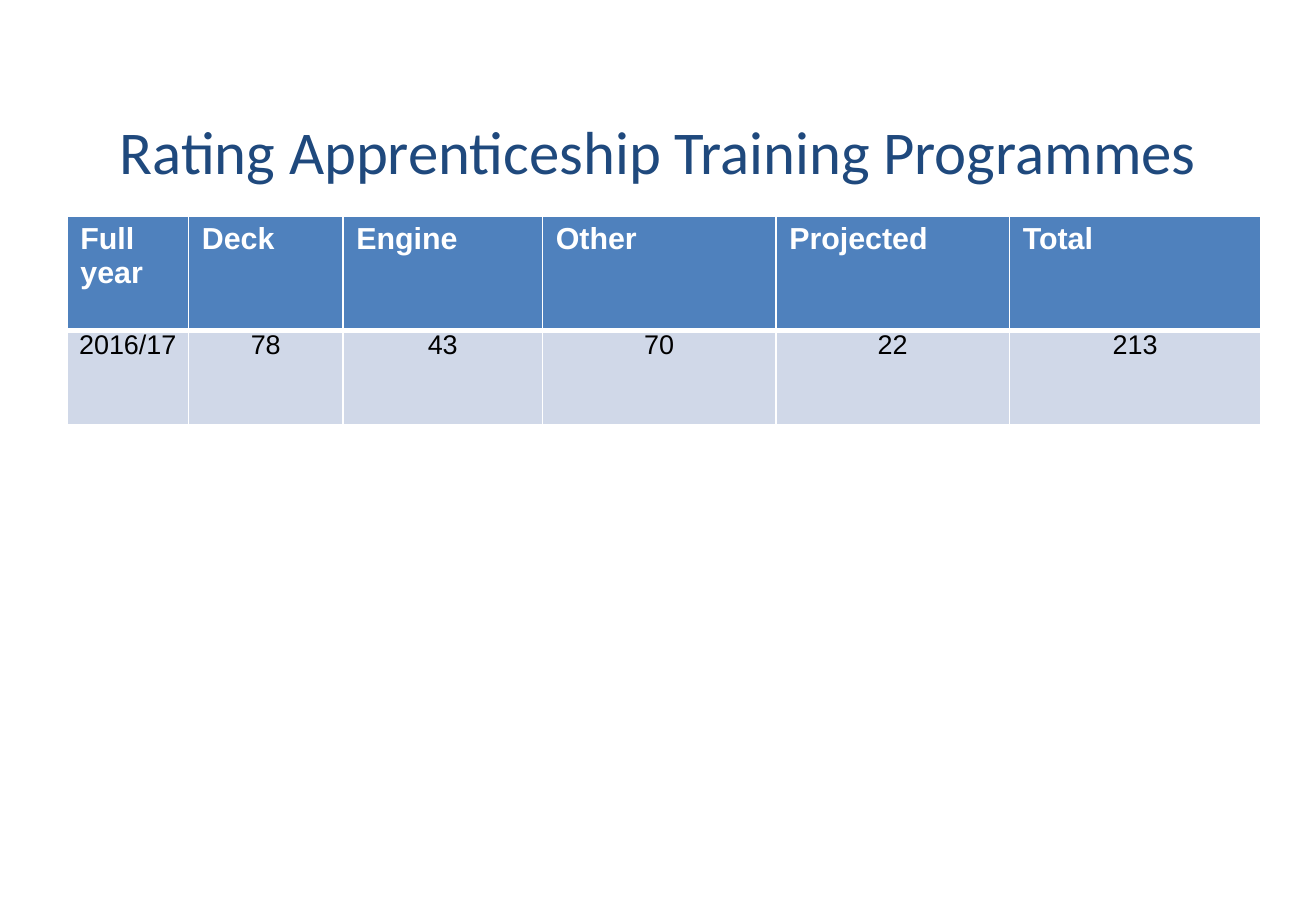
from lxml.etree import SubElement
from pptx import Presentation
from pptx.dml.color import RGBColor
from pptx.enum.text import MSO_ANCHOR as Anchor, PP_ALIGN as Align
from pptx.oxml.ns import qn
from pptx.util import Cm, Pt

HEADINGS = ["Full year", "Deck", "Engine", "Other", "Projected", "Total"]
FIGURES = ["2016/17", "78", "43", "70", "22", "213"]
COLUMN_WIDTHS = [2.54, 3.23, 4.17, 4.88, 4.88, 5.26]
ROW_HEIGHTS = [2.39, 1.98]


def colour(value):
    return RGBColor.from_string(value)


class ProgrammePage:
    """Holds the slide's style and adds its title and table."""

    navy, blue, pale, white, black = "1F497D", "4F81BD", "D0D8E8", "FFFFFF", "000000"

    def __init__(self, deck):
        self.page = deck.slides.add_slide(deck.slide_layouts[5])

    def add_text(self, frame, text, font, size, ink, align, bold=False):
        para = frame.paragraphs[0]
        para.alignment = align
        span = para.add_run()
        span.text = text
        span.font.name = font
        span.font.size = Pt(size)
        span.font.bold = bold
        span.font.color.rgb = colour(ink)

    def title(self, text, left, top, width, height):
        box = self.page.shapes.title
        box.left, box.top, box.width, box.height = map(Cm, (left, top, width, height))
        box.text_frame.vertical_anchor = Anchor.MIDDLE
        self.add_text(box.text_frame, text, "Calibri", 36, self.navy, Align.CENTER)

    def borders(self, cell, widths):
        properties = cell._tc.get_or_add_tcPr()
        for side, width in widths.items():
            line = SubElement(properties, qn(f"a:ln{side}"), w=str(Pt(width)))
            fill = SubElement(line, qn("a:solidFill"))
            SubElement(fill, qn("a:srgbClr"), val=self.white)

    def cell(self, cell, text, heading):
        self.borders(cell, {"L": 1, "R": 1, "T": 1 if heading else 3, "B": 3 if heading else 1})
        cell.fill.solid()
        cell.fill.fore_color.rgb = colour(self.blue if heading else self.pale)
        cell.margin_left = cell.margin_right = Cm(0.28 if heading else 0.2)
        cell.margin_top = cell.margin_bottom = Cm(0.13 if heading else 0)
        size, ink, align = (18, self.white, Align.LEFT) if heading else (16, self.black, Align.CENTER)
        self.add_text(cell.text_frame, text, "Arial", size, ink, align, heading)

    def table(self, rows, left, top, widths, heights):
        frame = self.page.shapes.add_table(
            len(rows), len(widths), Cm(left), Cm(top), Cm(sum(widths)), Cm(sum(heights)))
        table = frame.table
        for column, width in zip(table.columns, widths):
            column.width = Cm(width)
        for index, (texts, height) in enumerate(zip(rows, heights)):
            table.rows[index].height = Cm(height)
            for cell, text in zip(table.rows[index].cells, texts):
                self.cell(cell, text, index == 0)


def main():
    deck = Presentation()
    deck.slide_width, deck.slide_height = Cm(27.51), Cm(19.05)
    page = ProgrammePage(deck)
    page.title("Rating Apprenticeship Training Programmes", 1.37, 1.96, 24.77, 2.36)
    page.table([HEADINGS, FIGURES], 1.4, 4.52, COLUMN_WIDTHS, ROW_HEIGHTS)
    deck.save("out.pptx")


if __name__ == "__main__":
    main()
